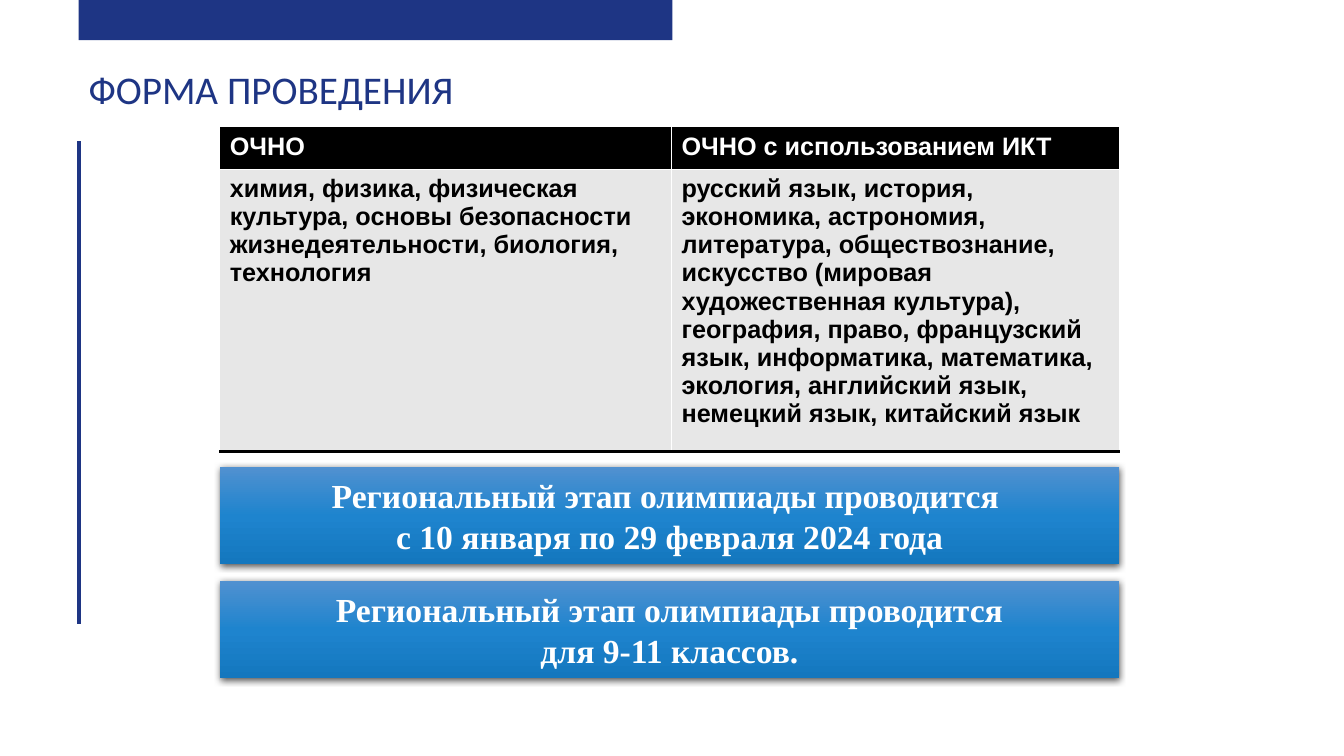
from copy import deepcopy

from lxml.etree import SubElement
from pptx import Presentation
from pptx.dml.color import RGBColor
from pptx.enum.shapes import MSO_CONNECTOR as Connector, MSO_SHAPE as Shape
from pptx.enum.text import MSO_ANCHOR as Anchor, PP_ALIGN as Align
from pptx.oxml.ns import qn
from pptx.util import Inches, Pt

NAVY = RGBColor(0x1E, 0x35, 0x84)
BLACK = RGBColor(0x00, 0x00, 0x00)
WHITE = RGBColor(0xFF, 0xFF, 0xFF)
LIGHT_GREY = RGBColor(0xE7, 0xE7, 0xE7)
BANNER_BLUES = (RGBColor(0x51, 0x91, 0xD0), RGBColor(0x1E, 0x84, 0xCE),
                RGBColor(0x14, 0x77, 0xBE))

MARGIN = 0.78
CONTENT_LEFT, CONTENT_WIDTH = 2.18, 8.92
COLUMN_WIDTHS = (4.48, 4.44)
ROW_HEIGHTS = (0.41, 2.8)
BANNER_TOP, BANNER_HEIGHT, BANNER_STEP = 4.63, 0.97, 1.13

FORMATS = (
    ("ОЧНО", "ОЧНО с использованием ИКТ"),
    ("химия, физика, физическая культура, основы безопасности "
     "жизнедеятельности, биология, технология",
     "русский язык, история, экономика, астрономия, литература, "
     "обществознание, искусство (мировая художественная культура), "
     "география, право, французский язык, информатика, математика, "
     "экология, английский язык, немецкий язык, китайский язык"),
)
BANNERS = (
    "Региональный этап олимпиады проводится \nс 10 января по 29 февраля 2024 года",
    " Региональный этап олимпиады проводится \nдля 9-11 классов.",
)


def style_text(frame, font_name, size, color, bold=False, align=Align.LEFT):
    for paragraph in frame.paragraphs:
        paragraph.alignment = align
        for run in paragraph.runs:
            run.font.name = font_name
            run.font.size = Pt(size)
            run.font.bold = bold
            run.font.color.rgb = color


def add_block(slide, left, top, width, height):
    block = slide.shapes.add_shape(Shape.RECTANGLE, Inches(left), Inches(top),
                                   Inches(width), Inches(height))
    block.shadow.inherit = False
    block.line.fill.background()
    return block


def add_side_rule(slide):
    rule = slide.shapes.add_connector(Connector.STRAIGHT, Inches(MARGIN), Inches(6.19),
                                      Inches(MARGIN), Inches(1.4))
    rule.line.color.rgb = NAVY
    rule.line.width = Pt(3)
    SubElement(rule._element.spPr, qn("a:effectLst"))


def add_title(slide, text):
    title = slide.shapes.add_textbox(Inches(MARGIN), Inches(0.6), Inches(9.49), Inches(0.57))
    title.text_frame.word_wrap = True
    title.text_frame.text = text
    style_text(title.text_frame, "Calibri", 28, NAVY)


def add_border(cell, side):
    border = cell._tc.get_or_add_tcPr().makeelement(qn(f"a:{side}"), {"w": str(Pt(2))})
    solid = SubElement(border, qn("a:solidFill"))
    SubElement(solid, qn("a:srgbClr"), val=str(BLACK))
    cell._tc.get_or_add_tcPr().insert(0, border)


def add_formats_table(slide):
    table = slide.shapes.add_table(
        len(FORMATS), len(COLUMN_WIDTHS), Inches(CONTENT_LEFT), Inches(1.27),
        Inches(CONTENT_WIDTH), Inches(sum(ROW_HEIGHTS))).table
    table.horz_banding = False
    for column, width in zip(table.columns, COLUMN_WIDTHS):
        column.width = Inches(width)
    row_looks = ((BLACK, WHITE, "lnT"), (LIGHT_GREY, BLACK, "lnB"))
    for row, height, texts, look in zip(table.rows, ROW_HEIGHTS, FORMATS, row_looks):
        row.height = Inches(height)
        fill_color, text_color, border_side = look
        for cell, text in zip(row.cells, texts):
            cell.fill.solid()
            cell.fill.fore_color.rgb = fill_color
            add_border(cell, border_side)
            cell.text_frame.text = text
            style_text(cell.text_frame, "Arial", 18, text_color, bold=True)


def fill_with_gradient(block):
    block.fill.gradient()
    block.fill.gradient_angle = 270
    stop_list = block._element.spPr.find(qn("a:gradFill")).find(qn("a:gsLst"))
    stop_list.insert(1, deepcopy(stop_list[0]))
    for index, (stop, color) in enumerate(zip(block.fill.gradient_stops, BANNER_BLUES)):
        stop.position = index / 2
        stop.color.rgb = color


def add_drop_shadow(block):
    effects = block._element.spPr.find(qn("a:effectLst"))
    shadow = SubElement(effects, qn("a:outerShdw"), blurRad=str(Pt(4.5)),
                        dist=str(Pt(1.5)), dir="5400000", rotWithShape="0")
    color = SubElement(shadow, qn("a:srgbClr"), val=str(BLACK))
    SubElement(color, qn("a:alpha"), val="63000")


def add_banner(slide, top, text):
    banner = add_block(slide, CONTENT_LEFT, top, CONTENT_WIDTH, BANNER_HEIGHT)
    fill_with_gradient(banner)
    add_drop_shadow(banner)
    banner.text_frame.word_wrap = True
    banner.text_frame.vertical_anchor = Anchor.MIDDLE
    banner.text_frame.text = text
    style_text(banner.text_frame, "Times New Roman", 24, WHITE, True, Align.CENTER)


def main():
    deck = Presentation()
    deck.slide_width, deck.slide_height = Inches(13.33), Inches(7.5)
    slide = deck.slides.add_slide(deck.slide_layouts[6])

    # Top bar, side rule and title
    top_bar = add_block(slide, MARGIN, 0, 5.89, 0.4)
    top_bar.fill.solid()
    top_bar.fill.fore_color.rgb = NAVY
    add_side_rule(slide)
    add_title(slide, "ФОРМА ПРОВЕДЕНИЯ")

    # Subjects by format
    add_formats_table(slide)

    # Dates and grades
    for index, text in enumerate(BANNERS):
        add_banner(slide, BANNER_TOP + index * BANNER_STEP, text)

    deck.save("out.pptx")


if __name__ == "__main__":
    main()
